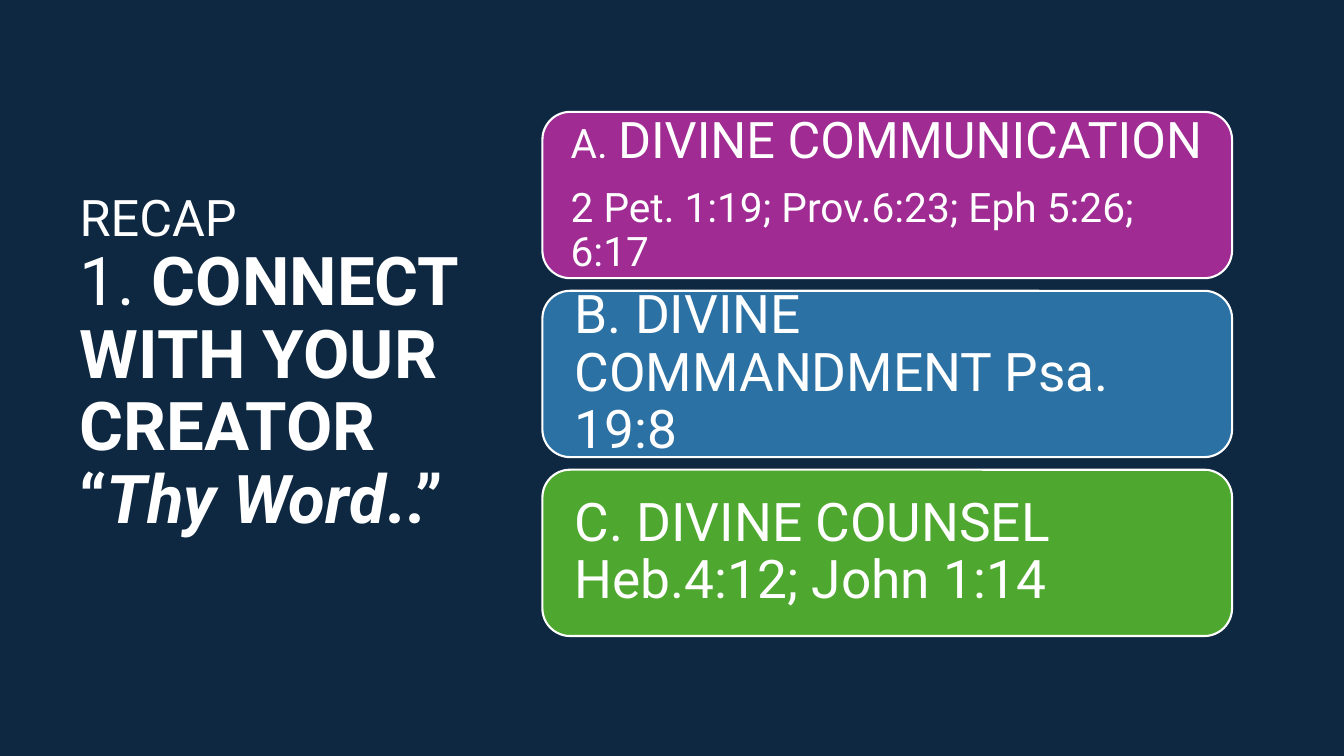
from pptx import Presentation
from pptx.dml.color import RGBColor
from pptx.enum.shapes import MSO_SHAPE as Shape
from pptx.enum.text import MSO_ANCHOR as Anchor, PP_ALIGN as Align
from pptx.util import Inches, Pt

NAVY = RGBColor(0x0E, 0x28, 0x41)
WHITE = RGBColor(0xFF, 0xFF, 0xFF)
PURPLE = RGBColor(0xA0, 0x2B, 0x93)
BLUE = RGBColor(0x2C, 0x71, 0xA4)
GREEN = RGBColor(0x4E, 0xA7, 0x2E)


def add_run(paragraph, text, size, bold=False, italic=False):
    run = paragraph.add_run()
    run.text = text
    font = run.font
    font.name = "Roboto"
    font.size = Pt(size)
    font.bold = bold
    font.italic = italic
    font.color.rgb = WHITE


presentation = Presentation()
presentation.slide_width = Inches(13.33)
presentation.slide_height = Inches(7.5)
slide = presentation.slides.add_slide(presentation.slide_layouts[5])
slide.background.fill.solid()
slide.background.fill.fore_color.rgb = NAVY

# Title
title = slide.shapes.title
title.left, title.top = Inches(0.69), Inches(0.54)
title.width, title.height = Inches(4.59), Inches(6.17)
title.text_frame.word_wrap = True
title.text_frame.vertical_anchor = Anchor.MIDDLE
heading = title.text_frame.paragraphs[0]
heading.alignment = Align.LEFT
heading.line_spacing = 0.9
add_run(heading, "RECAP", 36)
heading.add_line_break()
add_run(heading, "1. ", 48)
add_run(heading, "CONNECT WITH YOUR CREATOR", 48, bold=True)
heading.add_line_break()
add_run(heading, "“", 48, bold=True)
add_run(heading, "Thy Word", 48, bold=True, italic=True)
add_run(heading, "..”", 48, bold=True)

# Cards: fill, side inset, paragraphs of (text, size) runs
cards = [
    (PURPLE, 0.2, [
        [("A. ", 29), ("DIVINE COMMUNICATION", 36)],
        [("2 Pet. 1:19; Prov.6:23; Eph 5:26; 6:17", 29)],
    ]),
    (BLUE, 0.24, [[("B. DIVINE COMMANDMENT Psa. 19:8", 38)]]),
    (GREEN, 0.24, [[("C. DIVINE COUNSEL Heb.4:12; John 1:14", 38)]]),
]
CARD_TOP, CARD_STEP = 1.11, 1.775

for index, (color, inset, paragraphs) in enumerate(cards):
    card = slide.shapes.add_shape(
        Shape.ROUNDED_RECTANGLE, Inches(5.38),
        Inches(CARD_TOP + index * CARD_STEP), Inches(6.84), Inches(1.65))
    card.shadow.inherit = False
    card.fill.solid()
    card.fill.fore_color.rgb = color
    card.line.color.rgb = WHITE
    card.line.width = Pt(1.5)

    frame = card.text_frame
    frame.word_wrap = True
    frame.vertical_anchor = Anchor.MIDDLE
    frame.margin_left = frame.margin_right = Inches(inset)
    frame.margin_top = frame.margin_bottom = Inches(inset)
    for number, runs in enumerate(paragraphs):
        paragraph = frame.add_paragraph() if number else frame.paragraphs[0]
        paragraph.alignment = Align.LEFT
        paragraph.line_spacing = 0.9
        if number:
            paragraph.space_before = Pt(13)
        for text, size in runs:
            add_run(paragraph, text, size)

presentation.save("out.pptx")
